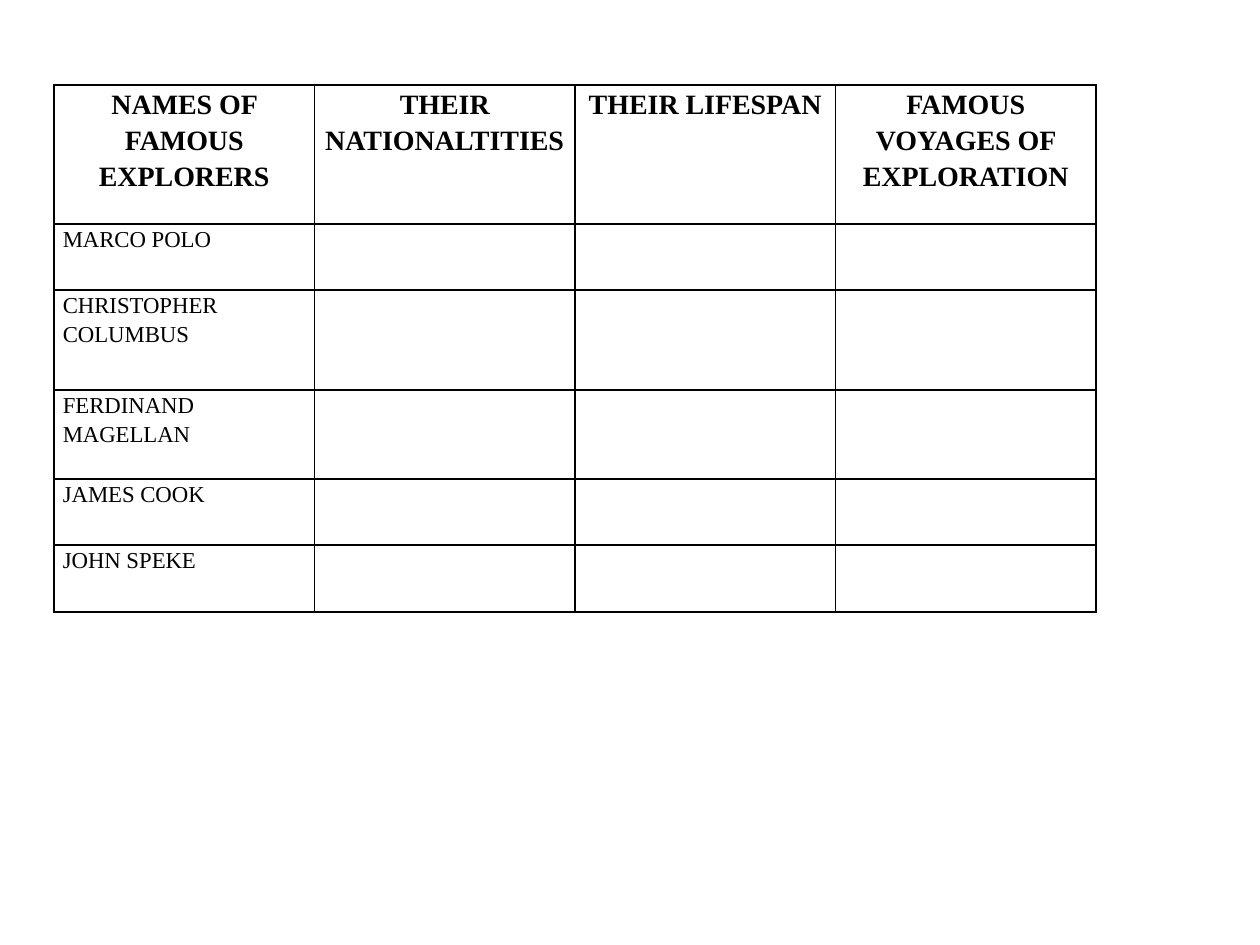
"""Build a worksheet slide with a table of famous explorers."""
from lxml import etree
from pptx import Presentation
from pptx import util as u
from pptx.dml.color import RGBColor
from pptx.enum import text
from pptx.oxml import ns

SCALE = 914400 / 126
BLACK = RGBColor(0, 0, 0)
FONT = "Times New Roman"
HEADERS = [
    "NAMES OF FAMOUS EXPLORERS",
    "THEIR NATIONALTITIES",
    "THEIR LIFESPAN",
    "FAMOUS VOYAGES OF EXPLORATION",
]
EXPLORERS = [
    "MARCO POLO",
    "CHRISTOPHER COLUMBUS",
    "FERDINAND MAGELLAN",
    "JAMES COOK",
    "JOHN SPEKE",
]
ROW_HEIGHTS = [139, 66, 100, 89, 66, 67]
HEADER_FORMAT = {"size": u.Pt(16), "bold": True, "name": FONT}
NAME_FORMAT = {"size": u.Pt(13), "bold": False, "name": FONT}
CELL_FORMAT = {
    "margin_left": u.Inches(0.07),
    "margin_right": u.Inches(0.07),
    "margin_top": 0,
    "margin_bottom": 0,
    "vertical_anchor": text.MSO_ANCHOR.TOP,
}


def px(length):
    """Turn whole pixels into EMU."""
    return u.Emu(round(length * SCALE))


def set_values(target, values):
    """Set each named attribute on the target."""
    for name, value in values.items():
        setattr(target, name, value)


def add_borders(cell):
    """Draw a thin black line on all four sides of a cell."""
    properties = cell._tc.get_or_add_tcPr()
    for index, side in enumerate(("lnL", "lnR", "lnT", "lnB")):
        line = etree.Element(ns.qn(f"a:{side}"), w=str(u.Pt(1)))
        fill = etree.SubElement(line, ns.qn("a:solidFill"))
        etree.SubElement(fill, ns.qn("a:srgbClr"), val=str(BLACK))
        properties.insert(index, line)


def write_cell(cell, words, font_format, alignment):
    """Write one formatted paragraph in a cell."""
    cell.text = words
    paragraph = cell.text_frame.paragraphs[0]
    set_values(paragraph, {"alignment": alignment, "line_spacing": 1.15})
    font = paragraph.runs[0].font
    set_values(font, font_format)
    font.color.rgb = BLACK


def add_explorer_table(slide):
    """Add the bordered grid with its headers and explorer names."""
    width = px(1042)
    frame = slide.shapes.add_table(
        len(ROW_HEIGHTS), len(HEADERS), px(54), px(85), width, px(sum(ROW_HEIGHTS))
    )
    table = frame.table
    set_values(table, {"first_row": False, "horz_banding": False})
    for column in table.columns:
        column.width = u.Emu(width // len(HEADERS))
    for row, height in zip(table.rows, ROW_HEIGHTS):
        row.height = px(height)
    for cell in table.iter_cells():
        set_values(cell, CELL_FORMAT)
        cell.fill.background()
        add_borders(cell)
    for column, header in enumerate(HEADERS):
        write_cell(table.cell(0, column), header, HEADER_FORMAT, text.PP_ALIGN.CENTER)
    for row, explorer in enumerate(EXPLORERS, start=1):
        write_cell(table.cell(row, 0), explorer, NAME_FORMAT, text.PP_ALIGN.LEFT)


def main():
    """Build and save the presentation."""
    presentation = Presentation()
    set_values(presentation, {"slide_width": px(1260), "slide_height": px(945)})
    slide = presentation.slides.add_slide(presentation.slide_layouts[6])
    add_explorer_table(slide)
    presentation.save("out.pptx")


if __name__ == "__main__":
    main()
